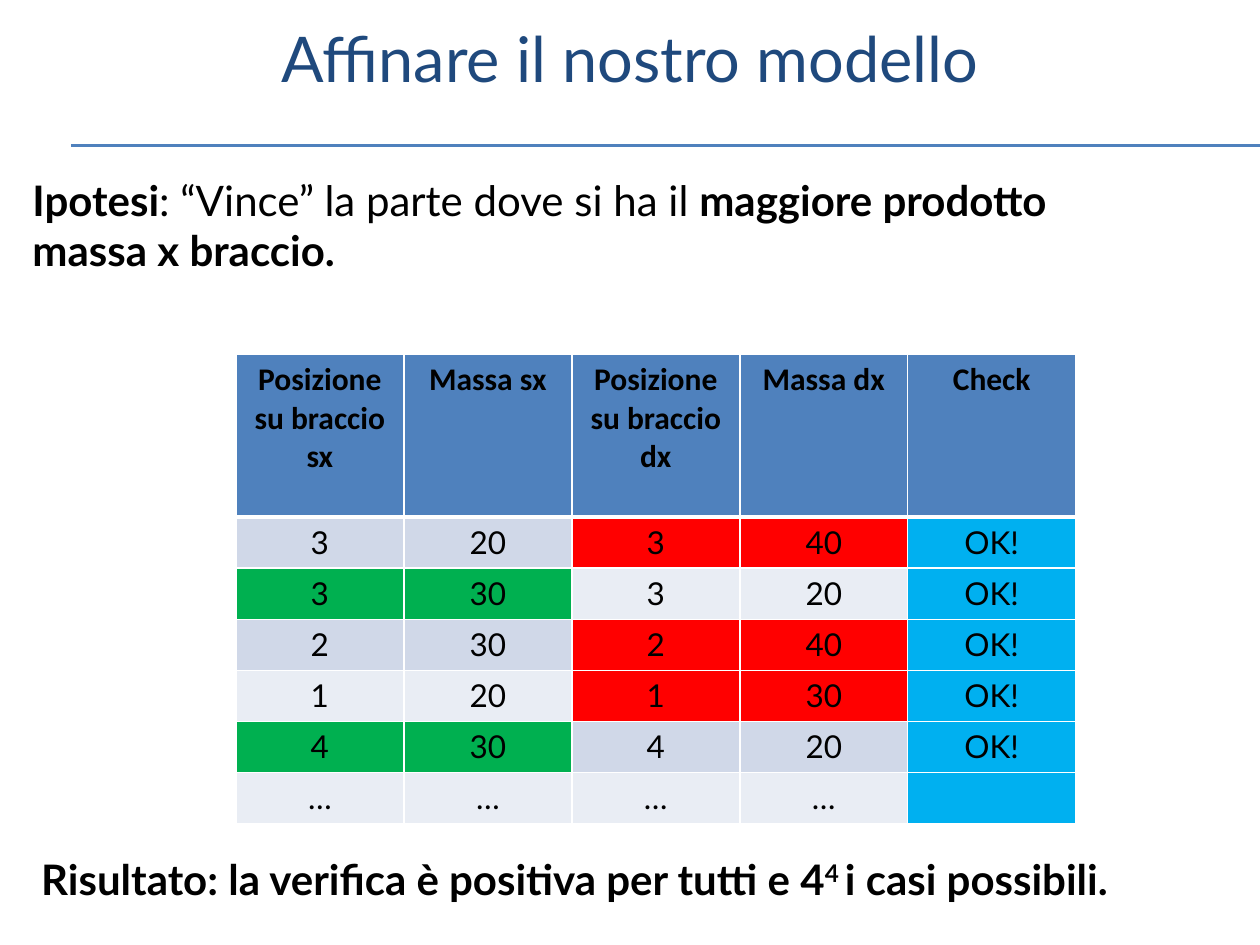
from pptx import Presentation
from pptx import util as u
from pptx.dml.color import RGBColor
from pptx.enum import shapes, text
from pptx.oxml.ns import qn
from lxml import etree

Pt = u.Pt

TITLE = "Affinare il nostro modello"
# Each run is (wording, style), where style is "b" bold, "^" superscript or "".
HYPOTHESIS = [
    [("Ipotesi", "b"), (": “Vince” la parte dove si ha il ", ""), ("maggiore prodotto", "b")],
    [("massa x braccio.", "b")],
]
RESULT = [[("Risultato: la verifica è positiva per tutti e 4", "b"), ("4 ", "b^"),
           ("i casi possibili.", "b")]]
HEADERS = ["Posizione su braccio sx", "Massa sx", "Posizione su braccio dx", "Massa dx", "Check"]
TRIALS = [(3, 20, 3, 40), (3, 30, 3, 20), (2, 30, 2, 40), (1, 20, 1, 30), (4, 30, 4, 20)]

THEME = {
    "font": "Lato", "head_font": "Calibri",
    "title_size": 36, "body_size": 24, "table_size": 18,
    "title": "1F497D", "ink": "000000", "rule": "4F81BD", "grid": "FFFFFF",
    "head": "4F81BD", "bands": ("D0D8E8", "E9EDF4"),
    "left_wins": "00B050", "right_wins": "FF0000", "check": "00B0F0",
}
SLIDE_W, SLIDE_H = 720, 540
RULE_X, RULE_YS = 40.5, (82.8, 83.5)
TABLE_X, TABLE_Y, COL_W, HEAD_H, ROW_H = 134.8, 202.5, 96, 93, 29.2


def style(r, size, color, bold=False, font=THEME["font"]):
    r.font.name, r.font.size, r.font.bold = font, Pt(size), bold
    r.font.color.rgb = RGBColor.from_string(color)


def add_text(s, box, paragraphs, size, color, align=None, anchor=text.MSO_ANCHOR.TOP):
    tf = s.shapes.add_textbox(*map(Pt, box)).text_frame
    tf.word_wrap, tf.vertical_anchor = True, anchor
    for i, runs in enumerate(paragraphs):
        p = tf.paragraphs[0] if i == 0 else tf.add_paragraph()
        p.alignment = align
        for wording, marks in runs:
            r = p.add_run()
            r.text = wording
            style(r, size, color, "b" in marks)
            if "^" in marks:
                r.font._element.set("baseline", "30000")


def add_rule(s, y):
    line = s.shapes.add_connector(shapes.MSO_CONNECTOR.STRAIGHT,
                                  Pt(RULE_X), Pt(y), Pt(SLIDE_W), Pt(y))
    line.line.color.rgb = RGBColor.from_string(THEME["rule"])
    line.line.width = Pt(0.75)
    etree.SubElement(line._element.spPr, qn("a:effectLst"))


def set_borders(cell, widths):
    tc_pr = cell._tc.get_or_add_tcPr()
    for i, (side, width) in enumerate(widths.items()):
        ln = etree.Element(qn(f"a:ln{side}"), w=str(Pt(width)))
        fill = etree.SubElement(ln, qn("a:solidFill"))
        etree.SubElement(fill, qn("a:srgbClr"), val=THEME["grid"])
        tc_pr.insert(i, ln)


def row_fills(i, trial):
    fills = [THEME["bands"][i % 2]] * 4 + [THEME["check"]]
    if trial:
        left, right = trial[0] * trial[1], trial[2] * trial[3]
        if left > right:
            fills[:2] = [THEME["left_wins"]] * 2
        elif right > left:
            fills[2:4] = [THEME["right_wins"]] * 2
    return fills


def add_table(s):
    rows = [(HEADERS, [THEME["head"]] * len(HEADERS))]
    rows += [([*map(str, t), "OK!"], row_fills(i, t)) for i, t in enumerate(TRIALS)]
    rows.append((["…"] * 4 + [""], row_fills(len(TRIALS), None)))
    n_rows, n_cols = len(rows), len(HEADERS)
    table = s.shapes.add_table(n_rows, n_cols, Pt(TABLE_X), Pt(TABLE_Y), Pt(COL_W * n_cols),
                               Pt(HEAD_H + ROW_H * (n_rows - 1))).table
    for col in table.columns:
        col.width = Pt(COL_W)
    for i, (words, fills) in enumerate(rows):
        head = i == 0
        table.rows[i].height = Pt(HEAD_H if head else ROW_H)
        for j, (word, fill) in enumerate(zip(words, fills)):
            cell = table.cell(i, j)
            cell.fill.solid()
            cell.fill.fore_color.rgb = RGBColor.from_string(fill)
            set_borders(cell, {"L": 1, "R": 1, "T": 3 if i == 1 else 1, "B": 3 if head else 1})
            p = cell.text_frame.paragraphs[0]
            p.text = word
            p.alignment = text.PP_ALIGN.CENTER
            for r in p.runs or [p]:
                style(r, THEME["table_size"], THEME["ink"], head,
                      THEME["head_font"] if head else THEME["font"])


def main():
    """Build the slide on the refined balance model."""
    prs = Presentation()
    prs.slide_width, prs.slide_height = Pt(SLIDE_W), Pt(SLIDE_H)
    s = prs.slides.add_slide(prs.slide_layouts[6])
    for y in RULE_YS:
        add_rule(s, y)
    add_text(s, (0, 0, SLIDE_W, 66), [[(TITLE, "")]], THEME["title_size"], THEME["title"],
             text.PP_ALIGN.CENTER, text.MSO_ANCHOR.MIDDLE)
    add_text(s, (16.5, 484, 692, 36), RESULT, THEME["body_size"], THEME["ink"])
    add_text(s, (11.5, 96, 698, 65.5), HYPOTHESIS, THEME["body_size"], THEME["ink"])
    add_table(s)
    prs.save("out.pptx")


if __name__ == "__main__":
    main()
